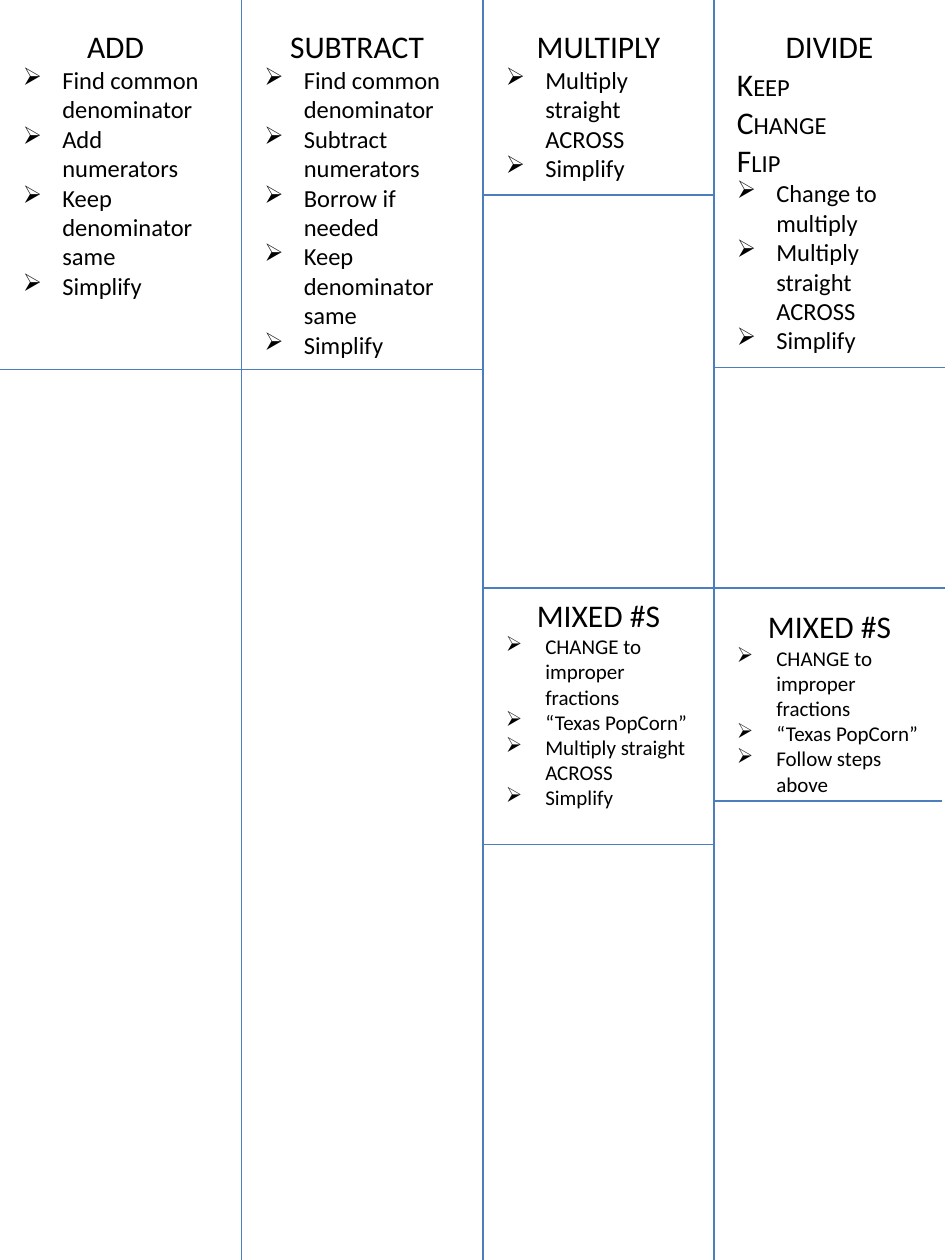
from lxml.etree import SubElement
from pptx import Presentation
from pptx.dml.color import RGBColor
from pptx.enum.shapes import MSO_CONNECTOR as Conn
from pptx.enum.text import MSO_AUTO_SIZE as Fit, PP_ALIGN as Align
from pptx.oxml.ns import qn
from pptx.util import Pt

BLACK = RGBColor(0x00, 0x00, 0x00)
BLUE = RGBColor(0x4B, 0x7E, 0xBC)
FONT = "Calibri"
WIDE, HIGH = 540, 720
EDGES = [0, 138, 276, 408, WIDE]  # column borders
PAD, BOX_W = 6, 120
HEAD, INDENT = 18, 22.5

# Cards: column, top, height, step size, title, key words, steps
CARDS = [
    (0, 12, 165, 14, "ADD", [],
     ["Find common denominator", "Add numerators",
      "Keep denominator same", "Simplify"]),
    (1, 12, 199, 14, "SUBTRACT", [],
     ["Find common denominator", "Subtract numerators", "Borrow if needed",
      "Keep denominator same", "Simplify"]),
    (2, 12, 97, 14, "MULTIPLY", [],
     ["Multiply straight ACROSS", "Simplify"]),
    (2, 337, 131, 12, "MIXED #S", [],
     ["CHANGE to improper fractions", "“Texas PopCorn”",
      "Multiply straight ACROSS", "Simplify"]),
    (3, 12, 197, 14, "DIVIDE", ["KEEP", "CHANGE", "FLIP"],
     ["Change to multiply", "Multiply straight ACROSS", "Simplify"]),
    (3, 343.5, 117, 12, "MIXED #S", [],
     ["CHANGE to improper fractions", "“Texas PopCorn”",
      "Follow steps above"]),
]

# Cross lines: left, right, height on the page
RULES = [
    (EDGES[0], EDGES[2], 211),
    (EDGES[2], EDGES[3], 111.5),
    (EDGES[3], WIDE, 210),
    (EDGES[2], EDGES[3], 336),
    (EDGES[2], EDGES[3], 482.5),
    (EDGES[3], WIDE, 336),
    (EDGES[3], WIDE - 1.5, 457.7),
]

deck = Presentation()
deck.slide_width, deck.slide_height = Pt(WIDE), Pt(HIGH)
slide = deck.slides.add_slide(deck.slide_layouts[6])


def add_line(x1, y1, x2, y2):
    line = slide.shapes.add_connector(
        Conn.STRAIGHT, Pt(x1), Pt(y1), Pt(x2), Pt(y2))
    line.line.color.rgb = BLUE
    line.line.width = Pt(0.75)
    SubElement(line._element.spPr, qn("a:effectLst"))


def add_run(para, text, size):
    run = para.add_run()
    run.text = text
    run.font.name = FONT
    run.font.size = Pt(size)
    run.font.color.rgb = BLACK


def add_bullet(para):
    props = para._p.get_or_add_pPr()
    props.set("marL", str(Pt(INDENT)))
    props.set("indent", str(-Pt(INDENT)))
    SubElement(props, qn("a:buChar")).set("char", "➢")


def add_card(col, top, height, size, title, words, steps):
    box = slide.shapes.add_textbox(
        Pt(EDGES[col] + PAD), Pt(top), Pt(BOX_W), Pt(height))
    frame = box.text_frame
    frame.word_wrap = True
    frame.auto_size = Fit.SHAPE_TO_FIT_TEXT
    para = frame.paragraphs[0]
    para.alignment = Align.CENTER
    add_run(para, title, HEAD)
    # Key words: large first letter, smaller rest
    for word in words:
        para = frame.add_paragraph()
        add_run(para, word[0], HEAD)
        add_run(para, word[1:], size)
    for step in steps:
        para = frame.add_paragraph()
        add_bullet(para)
        add_run(para, step, size)


# Column borders
for x in EDGES[1:-1]:
    add_line(x, 0, x, HIGH)

# Step cards
for card in CARDS:
    add_card(*card)

# Cross lines
for left, right, y in RULES:
    add_line(left, y, right, y)

deck.save("out.pptx")
